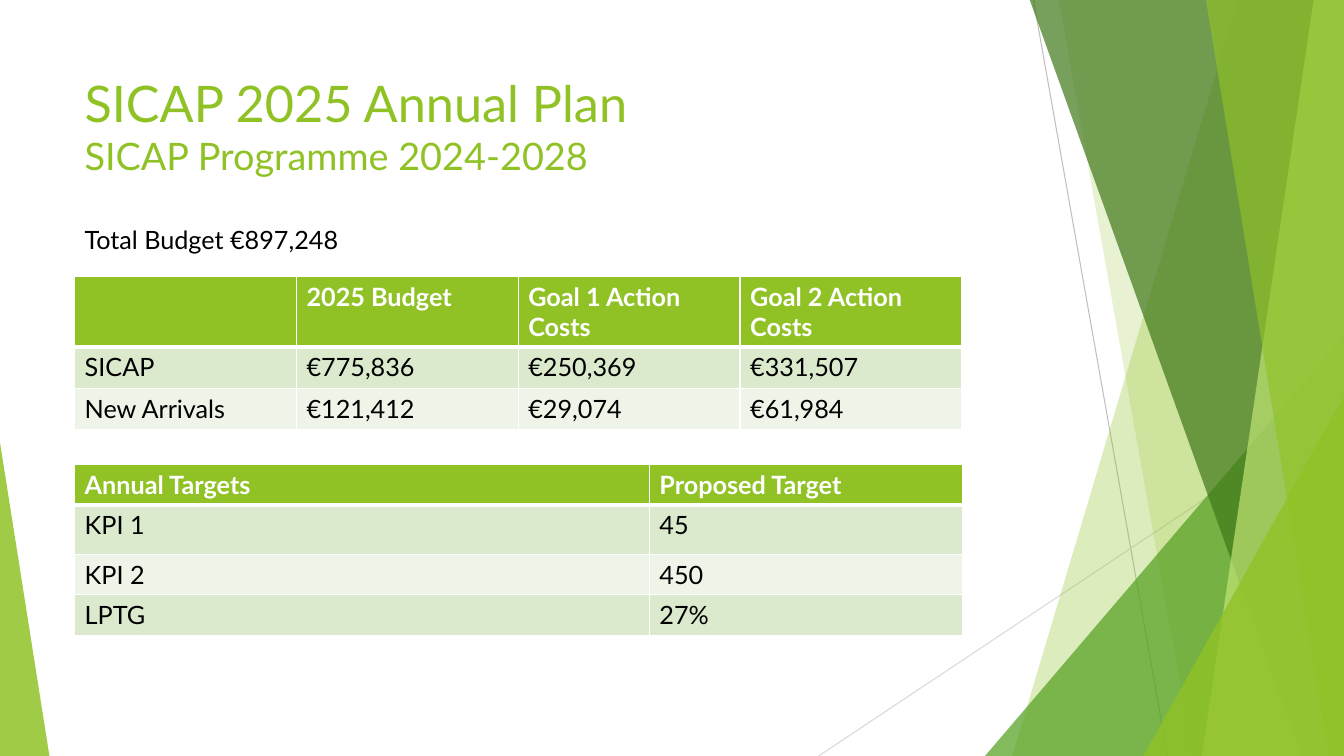
"""Build the SICAP 2025 annual plan slide."""
from dataclasses import dataclass

from lxml import etree
from pptx import Presentation
from pptx import util as u
from pptx.dml.color import RGBColor
from pptx.enum import shapes, text
from pptx.oxml import ns

PX = 9144
WIDTH, HEIGHT = 1333, 750
TOP = -1
FONT = "Lato"

LIME = RGBColor(0x90, 0xC2, 0x26)
GREEN = RGBColor(0x54, 0xA0, 0x21)
FOREST = RGBColor(0x3F, 0x78, 0x19)
PALE_LIME = RGBColor(0xC0, 0xE4, 0x74)
BAND_DARK = RGBColor(0xDB, 0xE9, 0xCD)
BAND_LIGHT = RGBColor(0xEE, 0xF4, 0xE8)
GREY = RGBColor(0xBF, 0xBF, 0xBF)
LIGHT_GREY = RGBColor(0xD9, 0xD9, 0xD9)
WHITE = RGBColor(0xFF, 0xFF, 0xFF)
BLACK = RGBColor(0, 0, 0)


@dataclass(frozen=True)
class Ray:
    """A thin straight line across the decoration."""
    start: tuple[int, int]
    end: tuple[int, int]
    color: RGBColor


@dataclass(frozen=True)
class Blade:
    """A panel with a slanted left edge that reaches the right side."""
    top_x: int
    bottom_x: int
    color: RGBColor
    opacity: int


@dataclass(frozen=True)
class Wedge:
    """A right triangle standing on the bottom edge."""
    left: int
    top: int
    width: int
    apex: int
    color: RGBColor
    opacity: int


@dataclass(frozen=True)
class Grid:
    """A banded table with a header row."""
    left: int
    top: int
    columns: list[int]
    rows: list[int]
    cells: list[list[str]]


@dataclass(frozen=True)
class Label:
    """A text box whose lines share one paragraph."""
    frame: tuple[int, int, int, int]
    lines: list[tuple[str, int]]
    color: RGBColor
    wrap: bool


RAYS = [
    Ray((1025, 0), (1158, HEIGHT), GREY),
    Ray((WIDTH, 403), (812, HEIGHT), LIGHT_GREY),
]
DECORATION = [
    Blade(1228, 1004, LIME, 30),
    Blade(1050, 1183, LIME, 20),
    Wedge(977, 333, 356, 1, GREEN, 72),
    Blade(1021, 1291, FOREST, 70),
    Blade(1303, 1192, PALE_LIME, 70),
    Blade(1196, 1318, LIME, 65),
    Wedge(1134, 393, 199, 1, LIME, 80),
    Wedge(0, 439, 49, 0, LIME, 85),
]
GRIDS = [
    Grid(74, 461, [570, 311], [40, 49, 40, 40], [
        ["Annual Targets", "Proposed Target"],
        ["KPI 1", "45"],
        ["KPI 2", "450"],
        ["LPTG", "27%"],
    ]),
    Grid(74, 274, [220] * 4, [70, 41, 41], [
        ["", "2025 Budget", "Goal 1 Action Costs", "Goal 2 Action Costs"],
        ["SICAP", "€775,836", "€250,369", "€331,507"],
        ["New Arrivals", "€121,412", "€29,074", "€61,984"],
    ]),
]
LABELS = [
    Label((74, 67, 940, 117), [("SICAP 2025 Annual Plan", 36), ("SICAP Programme 2024-2028", 27)], LIME, True),
    Label((74, 218, 272, 40), [("Total Budget €897,248", 18)], BLACK, False),
]


def emu(*lengths: int) -> list[int]:
    """Turn px lengths into EMU."""
    return [length * PX for length in lengths]


def style_font(span, size: int, color: RGBColor, bold: bool = False) -> None:
    """Apply the slide's font to one run."""
    for name, value in {"name": FONT, "size": u.Pt(size), "bold": bold}.items():
        setattr(span.font, name, value)
    span.font.color.rgb = color


def paint(shape, color: RGBColor, opacity: int) -> None:
    """Give a shape a translucent fill without outline or shadow."""
    shape.shadow.inherit = False
    shape.line.fill.background()
    shape.fill.solid()
    shape.fill.fore_color.rgb = color
    tint = shape.fill._xPr.find(".//" + ns.qn("a:srgbClr"))
    etree.SubElement(tint, ns.qn("a:alpha"), val=str(opacity * 1000))


def draw_ray(page, ray: Ray) -> None:
    """Draw one thin line."""
    line = page.shapes.add_connector(shapes.MSO_CONNECTOR.STRAIGHT, *emu(*ray.start, *ray.end))
    line.line.color.rgb = ray.color
    line.line.width = u.Pt(0.75)
    etree.SubElement(line._element.spPr, ns.qn("a:effectLst"))


def draw_blade(page, blade: Blade) -> None:
    """Draw one slanted panel."""
    outline = page.shapes.build_freeform(blade.top_x, TOP, scale=PX)
    outline.add_line_segments([(WIDTH, TOP), (WIDTH, HEIGHT), (blade.bottom_x, HEIGHT)], close=True)
    paint(outline.convert_to_shape(), blade.color, blade.opacity)


def draw_wedge(page, wedge: Wedge) -> None:
    """Draw one right triangle."""
    frame = emu(wedge.left, wedge.top, wedge.width, HEIGHT - wedge.top)
    triangle = page.shapes.add_shape(shapes.MSO_SHAPE.ISOSCELES_TRIANGLE, *frame)
    triangle.adjustments[0] = wedge.apex
    paint(triangle, wedge.color, wedge.opacity)


def draw_borders(cell, row: int) -> None:
    """Edge a cell in white, with a thick rule below the header."""
    thick_sides = {0: "B", 1: "T"}
    properties = cell._tc.get_or_add_tcPr()
    for side in "LRTB":
        points = 3 if thick_sides.get(row) == side else 1
        edge = etree.SubElement(properties, ns.qn(f"a:ln{side}"), w=str(u.Pt(points)))
        fill = etree.SubElement(edge, ns.qn("a:solidFill"))
        etree.SubElement(fill, ns.qn("a:srgbClr"), val=str(WHITE))


def draw_grid(page, grid: Grid) -> None:
    """Draw one table."""
    frame = emu(grid.left, grid.top, sum(grid.columns), sum(grid.rows))
    table = page.shapes.add_table(len(grid.rows), len(grid.columns), *frame).table
    for column, width in zip(table.columns, grid.columns):
        column.width = width * PX
    for index, (row, height) in enumerate(zip(table.rows, grid.rows)):
        row.height = height * PX
        header = index == 0
        band = LIME if header else BAND_DARK if index % 2 else BAND_LIGHT
        for cell, words in zip(row.cells, grid.cells[index]):
            draw_borders(cell, index)
            cell.fill.solid()
            cell.fill.fore_color.rgb = band
            if words:
                span = cell.text_frame.paragraphs[0].add_run()
                span.text = words
                style_font(span, 18, WHITE if header else BLACK, header)


def draw_label(page, label: Label) -> None:
    """Draw one text box."""
    box = page.shapes.add_textbox(*emu(*label.frame)).text_frame
    settings = {"word_wrap": label.wrap, "vertical_anchor": text.MSO_ANCHOR.TOP}
    for name, value in settings.items():
        setattr(box, name, value)
    para = box.paragraphs[0]
    for index, (words, size) in enumerate(label.lines):
        if index:
            para.add_line_break()
        span = para.add_run()
        span.text = words
        style_font(span, size, label.color)


def main() -> None:
    """Build and save the deck."""
    deck = Presentation()
    deck.slide_width, deck.slide_height = emu(WIDTH, HEIGHT)
    page = deck.slides.add_slide(deck.slide_layouts[6])
    for ray in RAYS:
        draw_ray(page, ray)
    for piece in DECORATION:
        if isinstance(piece, Blade):
            draw_blade(page, piece)
        else:
            draw_wedge(page, piece)
    for grid in GRIDS:
        draw_grid(page, grid)
    for label in LABELS:
        draw_label(page, label)
    deck.save("out.pptx")


if __name__ == "__main__":
    main()
